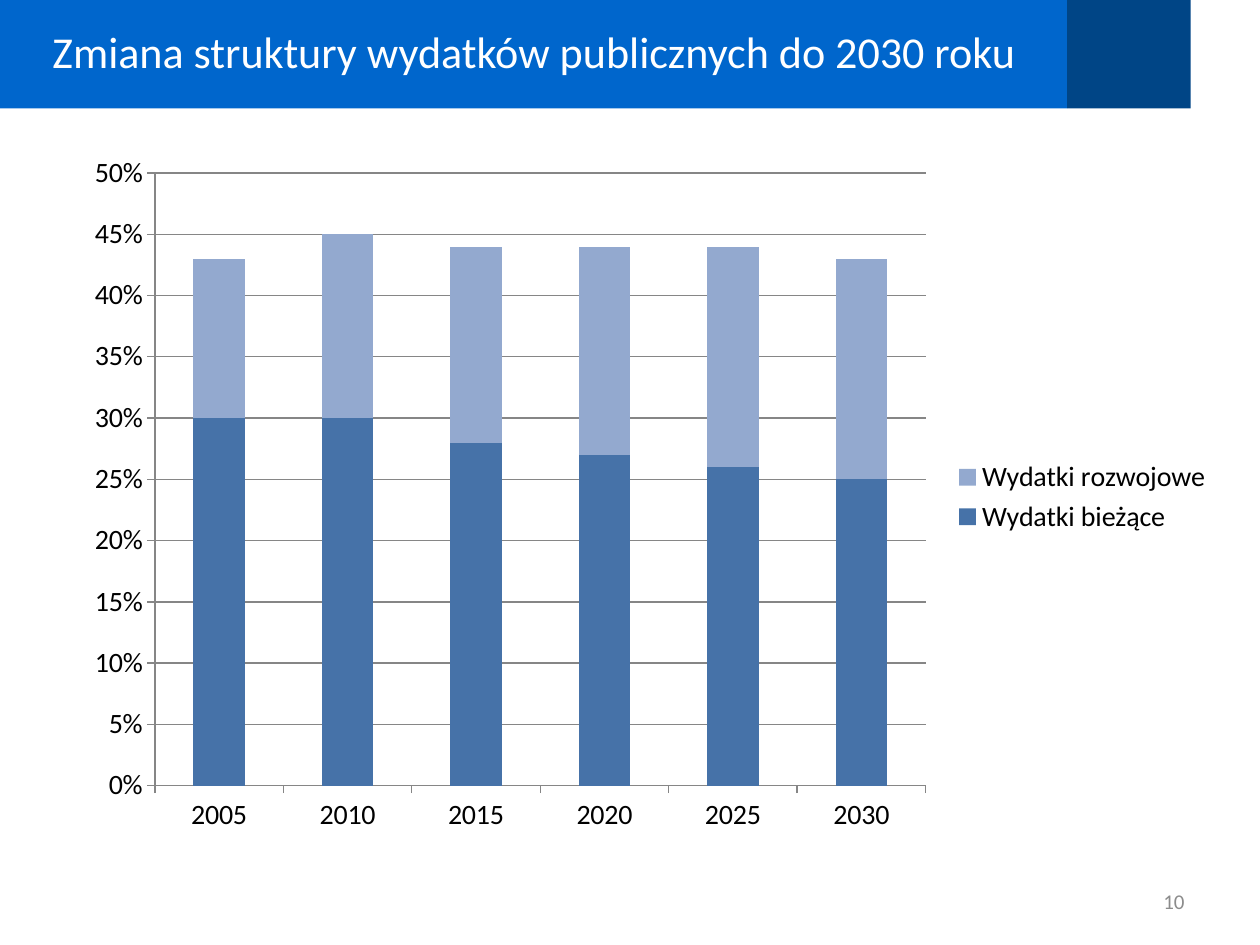
from lxml.etree import SubElement
from pptx import Presentation
from pptx.chart.data import CategoryChartData
from pptx.dml.color import RGBColor
from pptx.enum.chart import XL_CHART_TYPE, XL_LEGEND_POSITION, XL_TICK_MARK
from pptx.enum.shapes import MSO_SHAPE
from pptx.enum.text import MSO_ANCHOR, PP_ALIGN
from pptx.oxml.ns import qn
from pptx.util import Inches, Pt

FONT = "Calibri"
COLORS = {
    "banner": "0066CC",
    "corner": "004586",
    "title": "FFFFFF",
    "current": "4672A8",
    "development": "93A9CF",
    "axis": "868686",
    "text": "000000",
    "number": "8C8C8C",
}
YEARS = ["2005", "2010", "2015", "2020", "2025", "2030"]
SPENDING = [
    ("Wydatki bieżące", [0.30, 0.30, 0.28, 0.27, 0.26, 0.25], "current"),
    ("Wydatki rozwojowe", [0.13, 0.15, 0.16, 0.17, 0.18, 0.18], "development"),
]
PLOT_SHARES = {"x": 0.07, "y": 0.04, "w": 0.67, "h": 0.87}


def color(key):
    return RGBColor.from_string(COLORS[key])


def style_font(font, size, key):
    font.name, font.size = FONT, Pt(size)
    font.color.rgb = color(key)


def add_band(slide, preset, box, key):
    band = slide.shapes.add_shape(preset, *map(Inches, box))
    band.shadow.inherit = False
    band.fill.solid()
    band.fill.fore_color.rgb = color(key)
    band.line.fill.background()
    return band


def add_label(slide, text, box, size, key, align):
    label = slide.shapes.add_textbox(*map(Inches, box))
    frame = label.text_frame
    frame.word_wrap = True
    frame.vertical_anchor = MSO_ANCHOR.MIDDLE
    frame.text = text
    frame.paragraphs[0].alignment = align
    style_font(frame.paragraphs[0].runs[0].font, size, key)


def style_line(line):
    line.color.rgb = color("axis")
    line.width = Pt(0.75)


def place_plot(plot_area):
    layout = plot_area.find(qn("c:layout"))
    if layout is None:
        layout = plot_area.makeelement(qn("c:layout"))
        plot_area.insert(0, layout)
    manual = SubElement(layout, qn("c:manualLayout"))
    settings = {"layoutTarget": "inner", "xMode": "edge", "yMode": "edge", **PLOT_SHARES}
    for tag, value in settings.items():
        SubElement(manual, qn(f"c:{tag}")).set("val", str(value))


def add_spending_chart(slide, box):
    spending = CategoryChartData(number_format="0%")
    spending.categories = YEARS
    for name, shares, _ in SPENDING:
        spending.add_series(name, shares)
    chart = slide.shapes.add_chart(
        XL_CHART_TYPE.COLUMN_STACKED, *map(Inches, box), spending
    ).chart
    chart.has_title = False
    style_font(chart.font, 16, "text")

    columns = chart.plots[0]
    columns.vary_by_categories = False
    columns.gap_width, columns.overlap = 150, 100
    for series, (_, _, key) in zip(columns.series, SPENDING):
        series.format.fill.solid()
        series.format.fill.fore_color.rgb = color(key)

    for axis in (chart.category_axis, chart.value_axis):
        axis.major_tick_mark = XL_TICK_MARK.OUTSIDE
        axis.minor_tick_mark = XL_TICK_MARK.NONE
        style_line(axis.format.line)
    share_axis = chart.value_axis
    share_axis.minimum_scale, share_axis.maximum_scale = 0, 0.5
    share_axis.major_unit = 0.05
    share_axis.tick_labels.number_format = "0%"
    share_axis.tick_labels.number_format_is_linked = False
    style_line(share_axis.major_gridlines.format.line)

    chart.has_legend = True
    chart.legend.position = XL_LEGEND_POSITION.RIGHT
    chart.legend.include_in_layout = False
    style_font(chart.legend.font, 16, "text")
    place_plot(columns._element.getparent())


def main():
    deck = Presentation()
    deck.slide_width, deck.slide_height = Inches(10), Inches(7.5)
    slide = deck.slides.add_slide(deck.slide_layouts[6])
    add_band(slide, MSO_SHAPE.RECTANGLE, (0, -0.03, 8.47, 0.89), "banner")
    corner = add_band(slide, MSO_SHAPE.ROUNDED_RECTANGLE, (8.47, -0.03, 0.98, 0.89), "corner")
    corner.adjustments[0] = 0
    add_label(slide, "Zmiana struktury wydatków publicznych do 2030 roku",
              (0.01, -0.02, 8.46, 0.85), 25.2, "title", PP_ALIGN.CENTER)
    add_spending_chart(slide, (0.59, 1.15, 9.13, 5.59))
    add_label(slide, "10", (7.17, 6.95, 2.33, 0.4), 12, "number", PP_ALIGN.RIGHT)
    deck.save("out.pptx")


if __name__ == "__main__":
    main()
